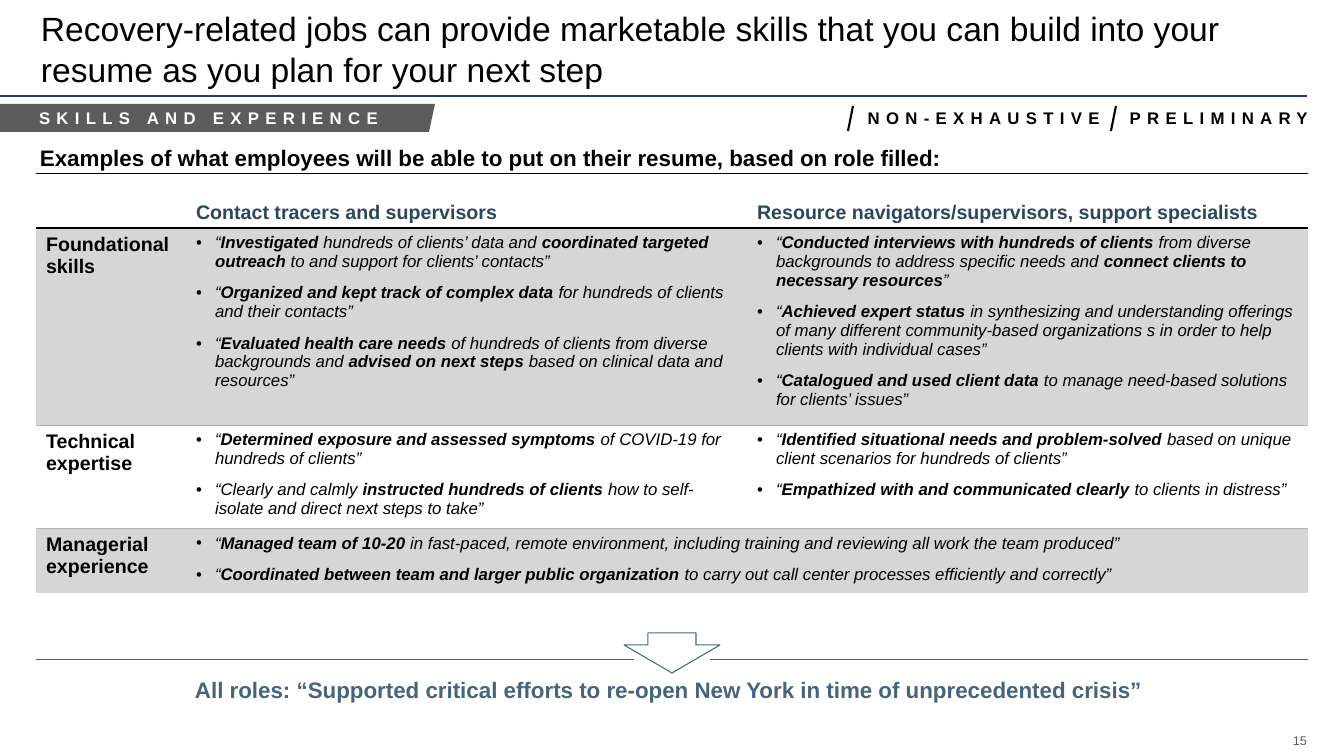
from lxml import etree
from pptx import Presentation
from pptx.dml.color import RGBColor
from pptx.enum.shapes import MSO_CONNECTOR, MSO_SHAPE
from pptx.enum.text import MSO_ANCHOR, MSO_AUTO_SIZE, PP_ALIGN
from pptx.oxml.ns import qn
from pptx.util import Emu, Pt

BLACK = RGBColor(0x00, 0x00, 0x00)
WHITE = RGBColor(0xFF, 0xFF, 0xFF)
NAVY = RGBColor(0x1D, 0x39, 0x83)
SLATE = RGBColor(0x46, 0x64, 0x7B)
DARK_SLATE = RGBColor(0x2D, 0x47, 0x5A)
GREY = RGBColor(0x5C, 0x5C, 0x5C)
BAND = RGBColor(0xD6, 0xD6, 0xD6)
RULE = RGBColor(0xB4, 0xB4, 0xB4)

LEFT, CENTER, RIGHT = PP_ALIGN.LEFT, PP_ALIGN.CENTER, PP_ALIGN.RIGHT
TOP, MIDDLE, BOTTOM = MSO_ANCHOR.TOP, MSO_ANCHOR.MIDDLE, MSO_ANCHOR.BOTTOM
FIT_SHAPE, FIXED = MSO_AUTO_SIZE.SHAPE_TO_FIT_TEXT, MSO_AUTO_SIZE.NONE
STRAIGHT, DOWN_ARROW = MSO_CONNECTOR.STRAIGHT, MSO_SHAPE.DOWN_ARROW
PLAIN_TABLE = "{2D5ABB26-0587-4C30-8999-92F81FD0307C}"

PAGE_WIDTH, PAGE_HEIGHT = 1344, 756
EDGE, END = 36, 1308
INDENT = 19

# Text between double asterisks is bold
HEADINGS = ["", "Contact tracers and supervisors",
            "Resource navigators/supervisors, support specialists"]
SKILLS = [
    ("Foundational skills", [
        "“**Investigated** hundreds of clients’ data and **coordinated targeted outreach **"
        "to and support for clients’ contacts”",
        "“**Organized and kept track of complex data **for hundreds of clients and their contacts”",
        "“**Evaluated health care needs **of hundreds of clients from diverse backgrounds and "
        "**advised on next steps** based on clinical data and resources”",
    ], [
        "“**Conducted interviews with hundreds of clients** from diverse backgrounds to address "
        "specific needs and **connect clients to necessary resources**”",
        "“**Achieved expert status **in synthesizing and understanding offerings of many different "
        "community-based organizations s in order to help clients with individual cases”",
        "“**Catalogued and used client data **to manage need-based solutions for clients’ issues”",
    ]),
    ("Technical expertise", [
        "“**Determined exposure and assessed symptoms** of COVID-19 for hundreds of clients”",
        "“Clearly and calmly **instructed hundreds of clients **how to self-isolate and direct "
        "next steps to take”",
    ], [
        "“**Identified situational needs and problem-solved **based on unique client scenarios "
        "for hundreds of clients”",
        "“**Empathized with and communicated clearly **to clients in distress”",
    ]),
    ("Managerial experience", [
        "“**Managed team of 10-20 **in fast-paced, remote environment, including training and "
        "reviewing all work the team produced”",
        "“**Coordinated between team and larger public organization **to carry out call center "
        "processes efficiently and correctly”",
    ], None),
]


def px(length):
    return Emu(round(length * 914400 / 100.8))


def write(frame, text, *, size, color=BLACK, bold=False, italic=False, align=LEFT,
          before=0, spacing=0, bullet=False, font="Arial"):
    """Fill a text frame, one paragraph for each line of text."""
    for number, line in enumerate(text.split("\n")):
        para = frame.add_paragraph() if number else frame.paragraphs[0]
        para.alignment = align
        para.space_before = Pt(before)
        if bullet:
            properties = para._p.get_or_add_pPr()
            properties.set("marL", str(px(INDENT)))
            properties.set("indent", str(-px(INDENT)))
            etree.SubElement(properties, qn("a:buFont"), typeface=font)
            etree.SubElement(properties, qn("a:buChar"), char="•")
        for order, part in enumerate(line.split("**")):
            if not part:
                continue
            span = para.add_run()
            span.text = part
            span.font.name = font
            span.font.size = Pt(size)
            span.font.bold = bold or order % 2 == 1
            span.font.italic = italic
            span.font.color.rgb = color
            if spacing:
                span._r.get_or_add_rPr().set("spc", str(round(spacing * 100)))


class Page:
    def __init__(self, deck):
        self.slide = deck.slides.add_slide(deck.slide_layouts[6])
        self.shapes = self.slide.shapes

    def text(self, left, top, width, height, text, *, anchor=TOP, inset=(4, 4, 4, 4),
             wrap=True, fit=FIT_SHAPE, **style):
        box = self.shapes.add_textbox(px(left), px(top), px(width), px(height))
        frame = box.text_frame
        frame.word_wrap = wrap
        frame.auto_size = fit
        frame.vertical_anchor = anchor
        (frame.margin_left, frame.margin_top,
         frame.margin_right, frame.margin_bottom) = map(px, inset)
        write(frame, text, **style)

    def line(self, x1, y1, x2, y2, color, weight):
        connector = self.shapes.add_connector(STRAIGHT, px(x1), px(y1), px(x2), px(y2))
        connector.line.color.rgb = color
        connector.line.width = Pt(weight)
        etree.SubElement(connector._element.spPr, qn("a:effectLst"))

    def arrow(self, left, top, width, height, color, weight):
        shape = self.shapes.add_shape(DOWN_ARROW, px(left), px(top), px(width), px(height))
        shape.adjustments[0], shape.adjustments[1] = 0.5, 0.7
        shape.shadow.inherit = False
        shape.fill.background()
        shape.line.color.rgb = color
        shape.line.width = Pt(weight)

    def outline(self, points, color):
        corners = [(px(x), px(y)) for x, y in points]
        builder = self.shapes.build_freeform(*corners[0])
        builder.add_line_segments(corners[1:], close=True)
        shape = builder.convert_to_shape()
        shape.shadow.inherit = False
        shape.fill.solid()
        shape.fill.fore_color.rgb = color
        shape.line.fill.background()

    def table(self, left, top, columns, rows):
        frame = self.shapes.add_table(len(rows), len(columns), px(left), px(top),
                                      px(sum(columns)), px(sum(rows)))
        table = frame.table
        table.first_row = table.horz_banding = False
        table._tbl.tblPr.find(qn("a:tableStyleId")).text = PLAIN_TABLE
        for column, width in zip(table.columns, columns):
            column.width = px(width)
        for row, height in zip(table.rows, rows):
            row.height = px(height)
        return table

    def cell(self, cell, text, *, fill=None, borders=(), anchor=TOP, **style):
        cell.vertical_anchor = anchor
        write(cell.text_frame, text, **style)
        properties = cell._tc.get_or_add_tcPr()
        for side, color, weight in borders:
            border = etree.SubElement(properties, qn(f"a:{side}"), w=str(Pt(weight)))
            solid = etree.SubElement(border, qn("a:solidFill"))
            etree.SubElement(solid, qn("a:srgbClr"), val=str(color))
        if fill is None:
            cell.fill.background()
        else:
            cell.fill.solid()
            cell.fill.fore_color.rgb = fill


def main():
    deck = Presentation()
    deck.slide_width, deck.slide_height = px(PAGE_WIDTH), px(PAGE_HEIGHT)
    page = Page(deck)

    # Title and page number
    page.text(1291, 733, 16, 15, "15", size=9, color=GREY, align=RIGHT,
              anchor=MIDDLE, inset=(0, 0, 0, 0), wrap=False)
    page.line(0, 96, 1307, 96, NAVY, 1.5)
    page.text(37, 0, 1270, 97, "Recovery-related jobs can provide marketable skills that you "
              "can build into your resume as you plan for your next step",
              size=24, anchor=BOTTOM, inset=(4, 4, 4, 8), fit=FIXED)

    # Status stickers
    for label, left, right in (("PRELIMINARY", 1114, END), ("NON-EXHAUSTIVE", 851, 1100)):
        page.text(left, 105, right - left, 26, label, size=12, bold=True, spacing=4.5,
                  align=RIGHT, inset=(8, 3, 0, 3), wrap=False)
        page.line(left + 2, 106, left - 3, 131, BLACK, 1.5)

    # Skills table
    table = page.table(EDGE, 188, [150, 561, 561], [34, 197, 103, 64])
    for column, heading in enumerate(HEADINGS):
        page.cell(table.cell(0, column), heading, size=14, bold=True, color=DARK_SLATE,
                  anchor=BOTTOM, borders=[("lnB", BLACK, 1.5)])
    for row, (label, tracers, navigators) in enumerate(SKILLS, 1):
        look = ({"fill": BAND} if row % 2 else
                {"borders": [("lnT", RULE, 0.75), ("lnB", RULE, 0.75)]})
        page.cell(table.cell(row, 0), label, size=14, bold=True, before=12, **look)
        if navigators is None:
            table.cell(row, 1).merge(table.cell(row, 2))
        for column, quotes in enumerate((tracers, navigators), 1):
            if quotes:
                page.cell(table.cell(row, column), "\n".join(quotes), size=12, italic=True,
                          before=9, bullet=True, **look)

    # Summary for all roles
    page.text(EDGE, 673, END - EDGE, 50, "All roles: “Supported critical efforts to re-open "
              "New York in time of unprecedented crisis” ", size=16, bold=True, color=SLATE,
              align=CENTER, anchor=MIDDLE, inset=(4, 4, 4, 20))
    page.arrow(624, 633, 96, 40, SLATE, 0.75)
    for start, stop in ((EDGE, 634), (710, END)):
        page.line(start, 660, stop, 660, SLATE, 0.75)

    # Section tag
    page.outline([(435, 104), (429, 132), (0, 132), (0, 104)], GREY)
    page.text(0, 104, 440, 28, "SKILLS AND EXPERIENCE", size=12, bold=True, color=WHITE,
              spacing=4.5, inset=(39, 4, 39, 4), wrap=False)

    # Table heading
    page.text(EDGE, 140, END - EDGE, 35, "Examples of what employees will be able to put on "
              "their resume, based on role filled:", size=16, bold=True, anchor=BOTTOM)
    page.line(EDGE, 174, END, 174, BLACK, 0.75)

    deck.save("out.pptx")


if __name__ == "__main__":
    main()
